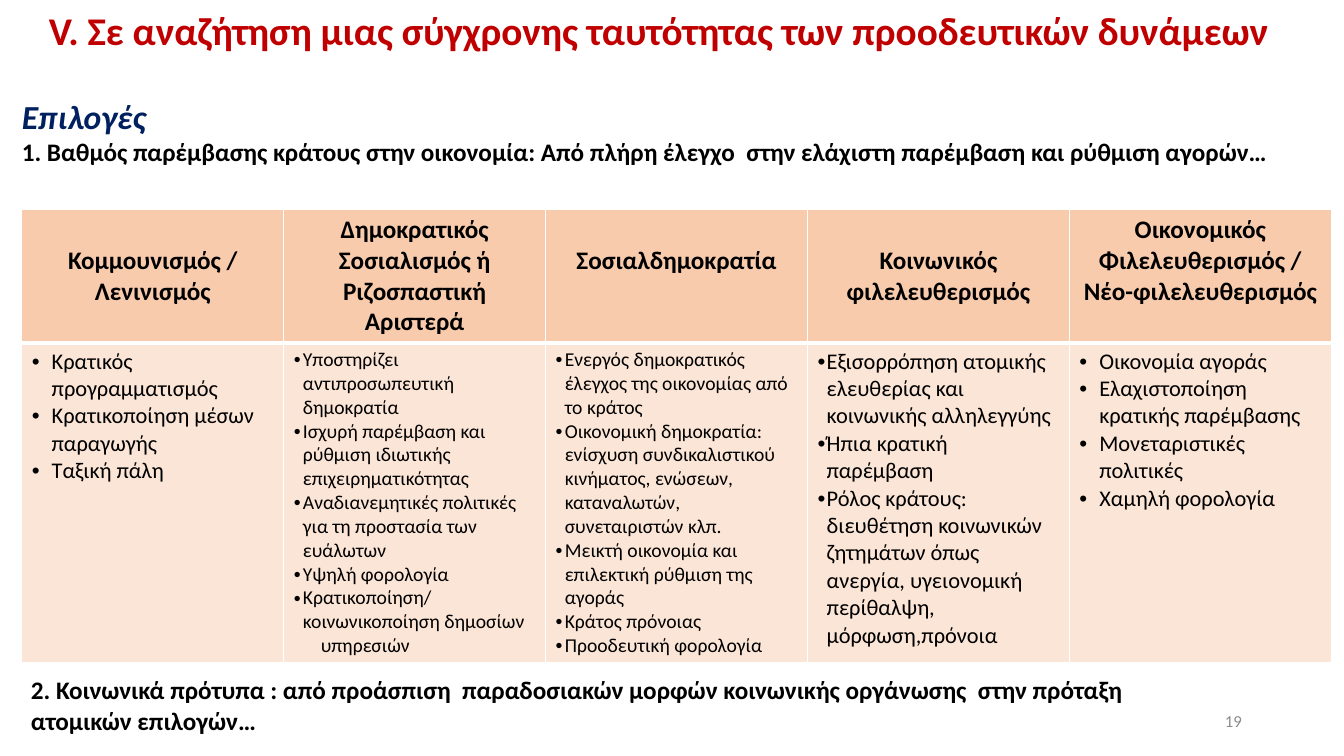
from lxml import etree
from pptx import Presentation
from pptx import util as u
from pptx.dml.color import RGBColor
from pptx.enum import text
from pptx.oxml.ns import qn

COLOURS = {"title": "C00000", "lead": "002060", "body": "000000", "number": "8C8C8C",
           "header": "F8CBAD", "cell": "FBE5D6", "border": "FFFFFF"}
WIDE, NARROW = 0.5, 0.23
LEFT, CENTRE, RIGHT, JUSTIFY = (text.PP_ALIGN.LEFT, text.PP_ALIGN.CENTER,
                                text.PP_ALIGN.RIGHT, text.PP_ALIGN.JUSTIFY)

COLUMNS = [
    {"heading": "Κομμουνισμός / Λενινισμός", "top": 0.9, "size": 16, "hang": WIDE, "align": LEFT,
     "points": ["Κρατικός προγραμματισμός", "Κρατικοποίηση μέσων παραγωγής", "Ταξική πάλη"]},
    {"heading": "Δημοκρατικός Σοσιαλισμός ή Ριζοσπαστική Αριστερά", "top": 0.13,
     "size": 14, "hang": NARROW, "align": LEFT,
     "points": ["Υποστηρίζει αντιπροσωπευτική δημοκρατία",
                "Ισχυρή παρέμβαση και ρύθμιση ιδιωτικής επιχειρηματικότητας",
                "Αναδιανεμητικές πολιτικές για τη προστασία των ευάλωτων",
                "Υψηλή φορολογία", "Κρατικοποίηση/"],
     "tail": "κοινωνικοποίηση δημοσίων υπηρεσιών"},
    {"heading": "Σοσιαλδημοκρατία", "top": 0.9, "size": 14, "hang": NARROW, "align": LEFT,
     "points": ["Ενεργός δημοκρατικός έλεγχος της οικονομίας από το κράτος",
                "Οικονομική δημοκρατία: ενίσχυση συνδικαλιστικού κινήματος, ενώσεων, "
                "καταναλωτών, συνεταιριστών κλπ.",
                "Μεικτή οικονομία και επιλεκτική ρύθμιση της αγοράς",
                "Κράτος πρόνοιας", "Προοδευτική φορολογία"]},
    {"heading": "Κοινωνικός φιλελευθερισμός", "top": 0.9, "size": 16, "hang": NARROW, "align": LEFT,
     "points": ["Εξισορρόπηση ατομικής ελευθερίας και κοινωνικής αλληλεγγύης",
                "Ήπια κρατική παρέμβαση",
                "Ρόλος κράτους: διευθέτηση κοινωνικών ζητημάτων όπως ανεργία, "
                "υγειονομική περίθαλψη, μόρφωση,πρόνοια"]},
    {"heading": "Οικονομικός Φιλελευθερισμός / Νέο-φιλελευθερισμός", "top": 0.13,
     "size": 16, "hang": WIDE, "align": JUSTIFY,
     "points": ["Οικονομία αγοράς", "Ελαχιστοποίηση κρατικής παρέμβασης",
                "Μονεταριστικές πολιτικές", "Χαμηλή φορολογία"]},
]


class SlideBuilder:
    """Hold the style and the current slide, and add each kind of element."""

    def __init__(self, deck, font="Calibri"):
        self.page = deck.slides.add_slide(deck.slide_layouts[5])
        self.font = font

    def fill_text(self, frame, lines, align=LEFT):
        for index, (words, colour, style) in enumerate(lines):
            para = frame.paragraphs[0] if index == 0 else frame.add_paragraph()
            para.alignment = align
            span = para.add_run()
            span.text = words
            for name, value in {"name": self.font, "bold": False, "italic": False, **style}.items():
                setattr(span.font, name, value)
            span.font.color.rgb = RGBColor.from_string(COLOURS[colour])

    def place(self, box, area, anchor):
        for name, value in zip(("left", "top", "width", "height"), area):
            setattr(box, name, u.Cm(value))
        frame = box.text_frame
        settings = {"word_wrap": True, "vertical_anchor": anchor, "auto_size": text.MSO_AUTO_SIZE.NONE,
                    "margin_left": u.Cm(0.25), "margin_right": u.Cm(0.25),
                    "margin_top": u.Cm(0.13), "margin_bottom": u.Cm(0.13)}
        for name, value in settings.items():
            setattr(frame, name, value)
        return frame

    def title(self, area, lines):
        frame = self.place(self.page.shapes.title, area, text.MSO_ANCHOR.TOP)
        self.fill_text(frame, lines, CENTRE)

    def label(self, area, lines, align=LEFT, anchor=text.MSO_ANCHOR.TOP):
        box = self.page.shapes.add_textbox(*map(u.Cm, area))
        self.fill_text(self.place(box, area, anchor), lines, align)

    def hang(self, para, left, indent, bullet=None):
        props = para._p.get_or_add_pPr()
        props.set("marL", str(u.Cm(left)))
        props.set("indent", str(u.Cm(indent)))
        if bullet:
            etree.SubElement(props, qn("a:buFont")).set("typeface", "Arial")
            etree.SubElement(props, qn("a:buChar")).set("char", bullet)

    def finish_cell(self, cell, fill, widths):
        props = cell._tc.get_or_add_tcPr()
        for side, width in widths.items():
            line = etree.SubElement(props, qn(f"a:ln{side}"), w=str(u.Pt(width)))
            paint = etree.SubElement(line, qn("a:solidFill"))
            etree.SubElement(paint, qn("a:srgbClr"), val=COLOURS["border"])
        cell.fill.solid()
        cell.fill.fore_color.rgb = RGBColor.from_string(COLOURS[fill])

    def table(self, area, heights, columns):
        table = self.page.shapes.add_table(len(heights), len(columns), *map(u.Cm, area)).table
        for row, height in zip(table.rows, heights):
            row.height = u.Cm(height)
        for index, column in enumerate(columns):
            table.columns[index].width = u.Cm(area[2] / len(columns))
            head, body = table.cell(0, index), table.cell(1, index)
            self.finish_cell(head, "header", {"L": 1, "R": 1, "T": 1, "B": 3})
            self.finish_cell(body, "cell", {"L": 1, "R": 1, "T": 3, "B": 1})
            head.margin_top = u.Cm(column["top"])
            self.fill_text(head.text_frame,
                           [(column["heading"], "body", {"size": u.Pt(18), "bold": True})], CENTRE)
            tail = [column["tail"]] if "tail" in column else []
            style = {"size": u.Pt(column["size"])}
            self.fill_text(body.text_frame,
                           [(words, "body", style) for words in column["points"] + tail],
                           column["align"])
            paras = body.text_frame.paragraphs
            for para in paras[:len(column["points"])]:
                self.hang(para, column["hang"], -column["hang"], "•")
            for para in paras[len(column["points"]):]:
                self.hang(para, 0.68, -0.45)


def main():
    deck = Presentation()
    deck.slide_width, deck.slide_height = u.Cm(33.87), u.Cm(19.05)
    slide = SlideBuilder(deck)
    strong = {"size": u.Pt(18), "bold": True}
    slide.table((0.55, 5.28, 33, 11.4), (3.35, 8.05), COLUMNS)
    slide.label((23.93, 17.65, 7.62, 1.02), [("19", "number", {"size": u.Pt(12)})],
                RIGHT, text.MSO_ANCHOR.MIDDLE)
    slide.title((0.84, 0.03, 31.5, 1.45),
                [("V. Σε αναζήτηση μιας σύγχρονης ταυτότητας των προοδευτικών δυνάμεων",
                  "title", {"size": u.Pt(28), "bold": True})])
    slide.label((0.3, 2.29, 32.72, 2.06), [
        ("Επιλογές", "lead", {"size": u.Pt(24), "bold": True, "italic": True}),
        ("1. Βαθμός παρέμβασης κράτους στην οικονομία: Από πλήρη έλεγχο  στην ελάχιστη "
         "παρέμβαση και ρύθμιση αγορών…", "body", strong)])
    slide.label((0.53, 16.87, 29.21, 1.8), [
        ("2. Κοινωνικά πρότυπα : από προάσπιση  παραδοσιακών μορφών κοινωνικής οργάνωσης  "
         "στην πρόταξη ατομικών επιλογών…", "body", strong)])
    deck.save("out.pptx")


if __name__ == "__main__":
    main()
